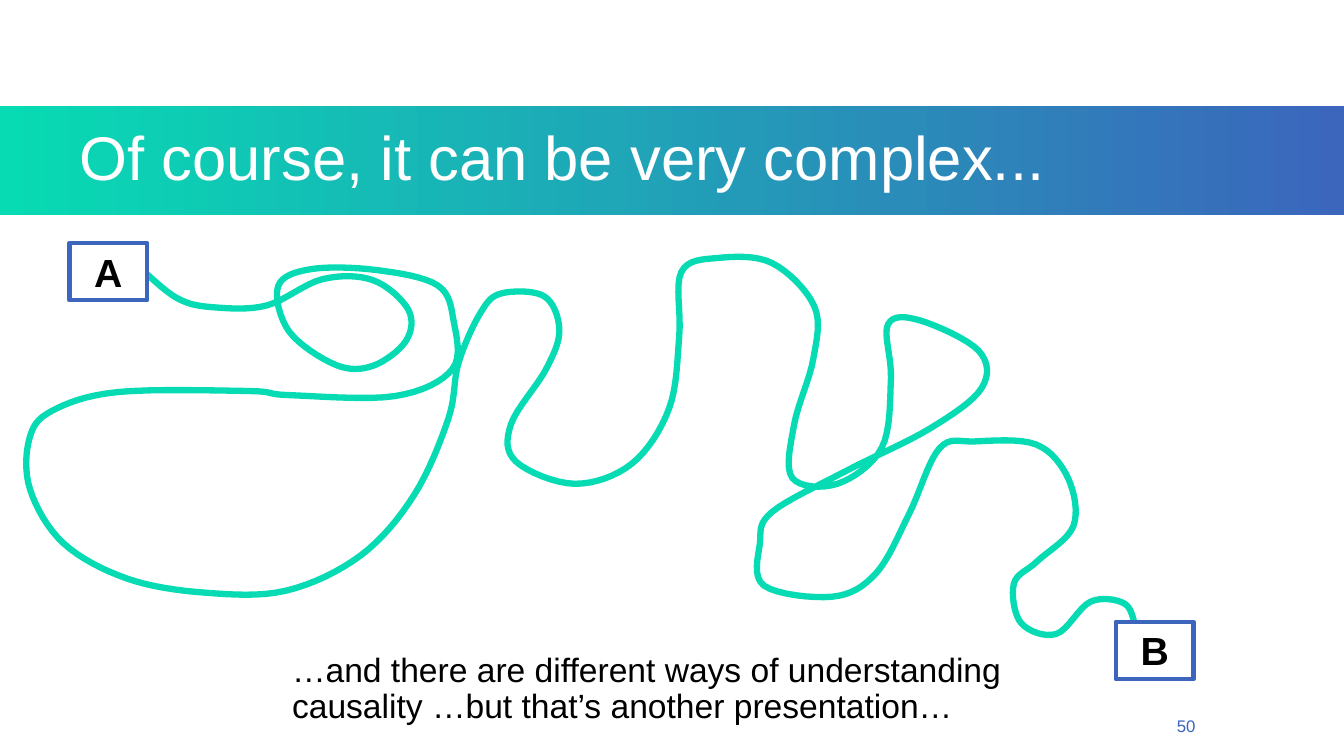
from pptx import Presentation
from pptx.dml.color import RGBColor
from pptx.enum.shapes import MSO_SHAPE
from pptx.enum.text import MSO_ANCHOR, PP_ALIGN
from pptx.util import Cm, Pt

RECT = MSO_SHAPE.RECTANGLE
TOP, MIDDLE, BOTTOM = MSO_ANCHOR.TOP, MSO_ANCHOR.MIDDLE, MSO_ANCHOR.BOTTOM
LEFT, CENTER, RIGHT = PP_ALIGN.LEFT, PP_ALIGN.CENTER, PP_ALIGN.RIGHT

TITLE = "Of course, it can be very complex..."
CAPTION = ("…and there are different ways of understanding causality "
           "…but that’s another presentation…")
PAGE = "50"
STOPS = [("B", 28.12, 15.67), ("A", 1.75, 6.12)]
INCH = 2.54
STEPS = 8
ROUTE = [
    (1.38, 2.65), (1.76, 2.96), (2.13, 3.05), (2.65, 3.03), (3.2, 2.77),
    (3.7, 2.78), (4.05, 3.07), (4.03, 3.38), (3.7, 3.63), (3.33, 3.62),
    (2.87, 3.29), (2.76, 2.84), (3.09, 2.67), (3.74, 2.68), (4.34, 2.83),
    (4.5, 3.18), (4.49, 3.66), (3.92, 3.93), (2.86, 3.92), (2.47, 3.88),
    (1.17, 3.89), (0.51, 4.08), (0.29, 4.36), (0.3, 4.86), (0.63, 5.39),
    (1.26, 5.74), (2.03, 5.88), (2.84, 5.86), (3.58, 5.51), (4.11, 4.91),
    (4.45, 4.15), (4.55, 3.6), (4.77, 3.1), (4.98, 2.91), (5.4, 2.94),
    (5.55, 3.27), (5.42, 3.66), (5.07, 4.21), (5.12, 4.58), (5.7, 4.8),
    (6.27, 4.6), (6.64, 4.05), (6.74, 3.33), (6.76, 2.7), (7.12, 2.56),
    (7.66, 2.61), (8.08, 3.04), (8.07, 3.56), (7.88, 4.21), (7.86, 4.74),
    (8.31, 4.8), (8.75, 4.44), (8.84, 3.76), (8.81, 3.22), (9.13, 3.18),
    (9.71, 3.48), (9.74, 3.85), (9.23, 4.25), (8.4, 4.67), (7.66, 5.08),
    (7.54, 5.39), (7.58, 5.81), (8.26, 5.92), (8.69, 5.69), (9.02, 5.1),
    (9.32, 4.45), (9.67, 4.38), (10.28, 4.41), (10.6, 4.75), (10.65, 5.22),
    (10.29, 5.57), (10.06, 5.79), (10.13, 6.18), (10.48, 6.29),
    (10.82, 5.97), (11.16, 5.99), (11.27, 6.23),
]


class Theme:
    font = "Arial"
    green = RGBColor(0x07, 0xDB, 0xB3)
    blue = RGBColor(0x3B, 0x66, 0xBC)
    white = RGBColor(0xFF, 0xFF, 0xFF)
    black = RGBColor(0, 0, 0)
    title, stop, caption, page = 44, 28, 24, 12
    route_width, box_width = 4.5, 3


def write(s, text, size, color=Theme.black, bold=False, align=LEFT,
          anchor=TOP, spacing=None, inset=0.25):
    tf = s.text_frame
    tf.word_wrap = True
    tf.vertical_anchor = anchor
    tf.margin_left = Cm(inset)
    p = tf.paragraphs[0]
    p.alignment = align
    if spacing:
        p.line_spacing = spacing
    r = p.add_run()
    r.text = text
    r.font.name = Theme.font
    r.font.size = Pt(size)
    r.font.bold = bold
    r.font.color.rgb = color


def spline(a, b, c, d, t):
    return b + t * (c - a + t * (2 * a - 5 * b + 4 * c - d
                                 + t * (3 * b - a - 3 * c + d))) / 2


def smooth(points):
    padded = points[:1] + points + points[-1:]
    curve = [tuple(spline(*axis, step / STEPS) for axis in zip(*quad))
             for quad in zip(padded, padded[1:], padded[2:], padded[3:])
             for step in range(STEPS)]
    return [(Cm(x * INCH), Cm(y * INCH)) for x, y in curve + points[-1:]]


def add_band(slide):
    s = slide.shapes.add_shape(RECT, 0, Cm(2.67), Cm(33.87), Cm(2.74))
    s.shadow.inherit = False
    s.line.fill.background()
    s.fill.gradient()
    s.fill.gradient_angle = 0
    for position, color in enumerate((Theme.green, Theme.blue)):
        stop = s.fill.gradient_stops[position]
        stop.color.rgb = color
        stop.position = position
    write(s, TITLE, Theme.title, color=Theme.white, anchor=MIDDLE,
          spacing=0.9, inset=2.01)


def add_route(slide):
    start, *rest = smooth(ROUTE)
    builder = slide.shapes.build_freeform(*start)
    builder.add_line_segments(rest, close=False)
    s = builder.convert_to_shape()
    s.shadow.inherit = False
    s.fill.background()
    s.line.color.rgb = Theme.green
    s.line.width = Pt(Theme.route_width)


def add_stop(slide, label, x, y):
    s = slide.shapes.add_shape(RECT, Cm(x), Cm(y), Cm(1.96), Cm(1.45))
    s.shadow.inherit = False
    s.fill.solid()
    s.fill.fore_color.rgb = Theme.white
    s.line.color.rgb = Theme.blue
    s.line.width = Pt(Theme.box_width)
    write(s, label, Theme.stop, bold=True, align=CENTER)


def main():
    prs = Presentation()
    prs.slide_width, prs.slide_height = Cm(33.87), Cm(19.05)
    slide = prs.slides.add_slide(prs.slide_layouts[6])
    page = slide.shapes.add_textbox(Cm(22.76), Cm(18.03), Cm(7.62), Cm(0.64))
    write(page, PAGE, Theme.page, color=Theme.blue, align=RIGHT, anchor=BOTTOM)
    add_band(slide)
    add_route(slide)
    for label, x, y in STOPS:
        add_stop(slide, label, x, y)
    caption = slide.shapes.add_textbox(Cm(7.11), Cm(16.33), Cm(20.57), Cm(2.11))
    write(caption, CAPTION, Theme.caption, spacing=0.9)
    prs.save("out.pptx")


if __name__ == "__main__":
    main()
